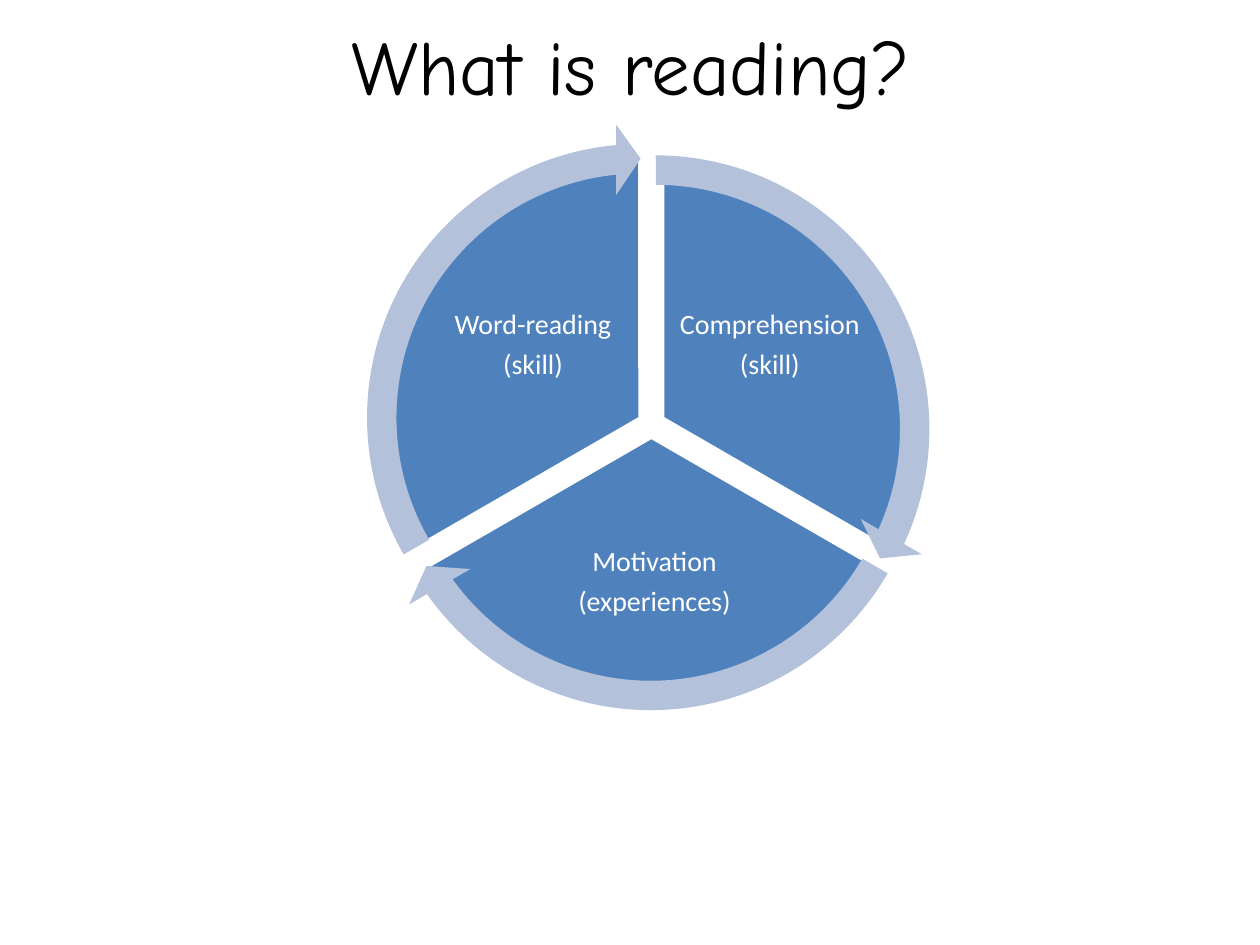
from pptx import Presentation
from pptx import util as u
from pptx.dml.color import RGBColor
from pptx.enum import shapes, text

PIE_SIZE = 4.16
ARROW_SIZE = 4.67
HEAD_ANGLE = 3.27
SEGMENTS = [
    (["Comprehension", "(skill)"], 162, 18,
     (0.43, 0.26), (2.62, 1.14, 1.48, 1.24), (0.12, 0.09)),
    (["Motivation", "(experiences)"], 18, 90,
     (0.34, 0.41), (1.33, 3.1, 2.23, 1.09), (0.08, 0.15)),
    (["Word-reading", "(skill)"], 90, 162,
     (0.25, 0.26), (0.74, 1.14, 1.48, 1.24), (0, 0)),
]


def color(value):
    return RGBColor.from_string(value)


def add_text(slide, box, lines, font, size, ink, inset=None):
    sp = slide.shapes.add_textbox(*map(u.Inches, box))
    tf = sp.text_frame
    tf.word_wrap = True
    tf.vertical_anchor = text.MSO_ANCHOR.MIDDLE
    if inset is not None:
        tf.margin_left = tf.margin_right = u.Inches(inset)
        tf.margin_top = tf.margin_bottom = u.Inches(inset)
    for i, line in enumerate(lines):
        p = tf.paragraphs[0] if i == 0 else tf.add_paragraph()
        p.alignment = text.PP_ALIGN.CENTER
        r = p.add_run()
        r.text = line
        r.font.name = font
        r.font.size = u.Pt(size)
        r.font.color.rgb = color(ink)
    return tf


def add_round(slide, kind, left, top, size, adjustments, fill):
    sp = slide.shapes.add_shape(kind, *map(u.Inches, (left, top, size, size)))
    sp.shadow.inherit = False
    for i, value in enumerate(adjustments):
        sp.adjustments[i] = value
    sp.fill.solid()
    sp.fill.fore_color.rgb = color(fill)
    sp.line.fill.background()
    return sp


def add_title(slide, box):
    add_text(slide, box, ["What is reading?"], "Comic Neue", 44, "000000")


def add_cycle(slide, left, top):
    for lines, start, end, pie, label, _ in SEGMENTS:
        sp = add_round(slide, shapes.MSO_SHAPE.PIE, left + pie[0], top + pie[1],
                       PIE_SIZE, (start, end), "4F81BD")
        sp.line.color.rgb = color("FFFFFF")
        sp.line.width = u.Pt(2)
        x, y, width, height = label
        tf = add_text(slide, (left + x, top + y, width, height), lines,
                      "Calibri", 16, "FFFFFF", 0.02)
        for p in tf.paragraphs:
            p.line_spacing = 0.9
            p.space_after = u.Pt(5.6)
    for _, start, end, _, _, arrow in SEGMENTS:
        add_round(slide, shapes.MSO_SHAPE.CIRCULAR_ARROW,
                  left + arrow[0], top + arrow[1], ARROW_SIZE,
                  (0.05, HEAD_ANGLE, end - HEAD_ANGLE, start, 0.06), "B3C1DB")


def main():
    prs = Presentation()
    prs.slide_width = u.Inches(10)
    prs.slide_height = u.Inches(7.5)
    s = prs.slides.add_slide(prs.slide_layouts[6])
    s.background.fill.solid()
    s.background.fill.fore_color.rgb = color("FFFFFF")
    add_title(s, (0.51, -0.11, 9, 1.25))
    add_cycle(s, 2.75, 0.98)
    prs.save("out.pptx")


if __name__ == "__main__":
    main()
